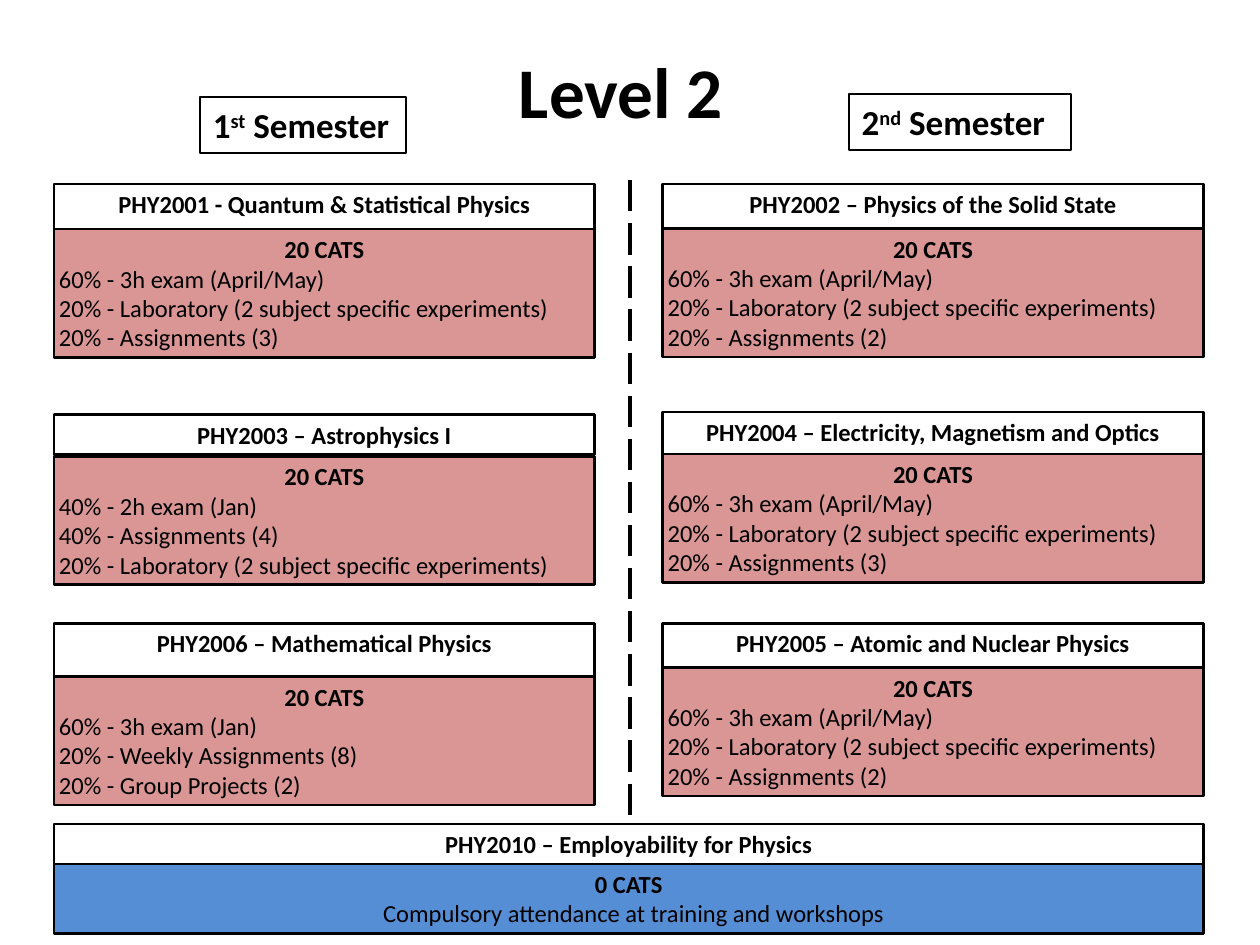
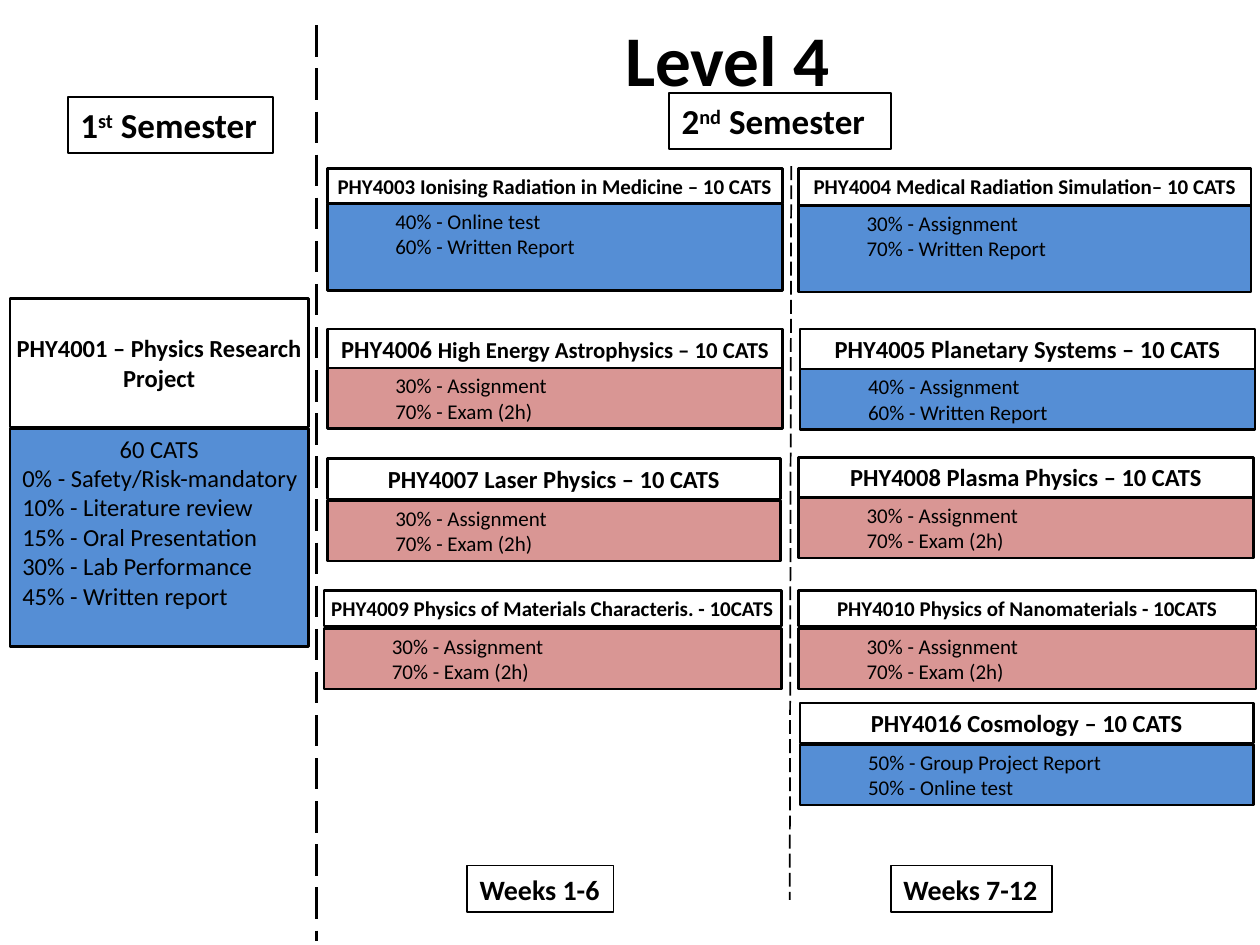
from dataclasses import dataclass

from lxml import etree
from pptx import Presentation
from pptx import util as u
from pptx.dml.color import RGBColor
from pptx.enum import dml, shapes, text
from pptx.oxml.ns import qn

FONT = "Calibri"
BLACK, WHITE, RED, BLUE = "000000", "FFFFFF", "D99694", "558ED5"
PAD = 0.1
LEFT, RIGHT, WIDE = 1.09, 13.36, 10.9
EARLY, LATE, SLIM = 6.6, 16.1, 9.17
SPRING = "60% - 3h exam (April/May)"
WINTER = "60% - 3h exam (Jan)"
LAB = "20% - Laboratory (2 subject specific experiments)"
TASK, TEST = "30% - Assignment", "70% - Exam (2h)"


@dataclass(frozen=True)
class Span:
    text: str
    size: float = 14
    sup: bool = False


@dataclass(frozen=True)
class Look:
    """Style of the work list in a card."""
    size: float = 14
    dent: float = 0
    bold: bool = True
    mid: bool = False


CORE, SHORT = Look(), Look(size=12, dent=1.27)
MAIN, WORK = Look(dent=0.15, bold=False), Look(dent=0.2, mid=True)


@dataclass(frozen=True)
class Card:
    """A module: drop is the step from head to body, cap the head's height."""
    x: float
    y: float
    w: float
    drop: float
    cap: float
    deep: float
    head: tuple[Span, ...]
    work: tuple[str, ...]
    fill: str = RED
    cats: str = ""
    look: Look = CORE
    anchor: text.MSO_ANCHOR = text.MSO_ANCHOR.TOP


@dataclass(frozen=True)
class Label:
    x: float
    y: float
    w: float
    h: float
    spans: tuple[Span, ...]


@dataclass(frozen=True)
class Rule:
    x: float
    top: float
    end: float
    low: float
    wide: float


def core(x: float, y: float, drop: float, name: str, *work: str,
         cap: float = 1.4) -> Card:
    return Card(x, y, WIDE, drop, cap, 2.59, (Span(name),), work,
                cats="20 CATS")


def short(x: float, y: float, drop: float, head: tuple[Span, ...],
          *work: str, w: float = SLIM, cap: float = 0.81,
          deep: float = 1.22, fill: str = RED) -> Card:
    return Card(x, y, w, drop, cap, deep, head, work, fill, look=SHORT)


def term(x: float, y: float, w: float, num: str, sup: str) -> Label:
    return Label(x, y, w, 1.12, (Span(num, 20), Span(sup, 20, True),
                                 Span(" Semester", 20)))


RULES2 = (Rule(12.7, 3.63, 12.7, 18.42, 2.25),)
LABELS2 = (term(4.04, 1.96, 4.14, "1", "st"),
           term(17.12, 1.9, 4.47, "2", "nd"))
CARDS2 = (
    core(LEFT, 3.71, 0.91, "PHY2001 - Quantum & Statistical Physics",
         SPRING, LAB, "20% - Assignments (3)"),
    core(LEFT, 8.36, 0.84, "PHY2003 – Astrophysics I",
         "40% - 2h exam (Jan)", "40% - Assignments (4)", LAB, cap=0.81),
    core(RIGHT, 3.71, 0.9, "PHY2002 – Physics of the Solid State",
         SPRING, LAB, "20% - Assignments (2)"),
    core(RIGHT, 8.31, 0.84, "PHY2004 – Electricity, Magnetism and Optics",
         SPRING, LAB, "20% - Assignments (3)"),
    core(RIGHT, 12.57, 0.89, "PHY2005 – Atomic and Nuclear Physics",
         SPRING, LAB, "20% - Assignments (2)"),
    core(LEFT, 12.57, 1.07, "PHY2006 – Mathematical Physics",
         WINTER, "20% - Weekly Assignments (8)", "20% - Group Projects (2)"),
    Card(LEFT, 16.61, 23.17, 0.81, 0.81, 1.4,
         (Span("PHY2010 – Employability for Physics"),),
         ("Compulsory attendance at training and workshops",),
         BLUE, "0 CATS", WORK),
)

RULES4 = (Rule(15.95, 3.35, 15.92, 18.14, 1), Rule(6.38, 0.51, 6.38, 18.97, 2.25))
LABELS4 = (
    term(1.37, 1.96, 4.14, "1", "st"), term(13.49, 1.88, 4.47, "2", "nd"),
    Label(9.42, 17.45, 2.95, 0.94, (Span("Weeks 1-6", 16),)),
    Label(17.96, 17.45, 3.25, 0.94, (Span("Weeks 7-12", 16),)),
)
CARDS4 = (
    Card(0.2, 6.02, 6.02, 2.62, 2.59, 4.39,
         (Span("PHY4001 – Physics Research Project"),),
         ("0% - Safety/Risk-mandatory", "10% - Literature review",
          "15% - Oral Presentation", "30% - Lab Performance",
          "45% - Written report"),
         BLUE, "60 CATS", MAIN, text.MSO_ANCHOR.MIDDLE),
    short(16.13, 6.63, 0.81, (Span("PHY4005 Planetary Systems – 10 CATS"),),
          "40% - Assignment", "60% - Written Report", fill=BLUE),
    short(EARLY, 6.63, 0.79,
          (Span("PHY4006 "), Span("High Energy Astrophysics – 10 CATS", 13)),
          TASK, TEST),
    short(LATE, 9.22, 0.81, (Span("PHY4008 Plasma Physics – 10 CATS"),),
          TASK, TEST),
    short(EARLY, 9.25, 0.84, (Span("PHY4007 Laser Physics – 10 CATS"),),
          TASK, TEST, w=9.14),
    short(6.53, 11.91, 0.76,
          (Span("PHY4009 Physics of Materials Characteris. - 10CATS", 12),),
          TASK, TEST, w=9.22, cap=0.71),
    short(16.13, 14.17, 0.84, (Span("PHY4016 Cosmology – 10 CATS"),),
          "50% - Group Project Report", "50% - Online test",
          w=9.14, fill=BLUE),
    short(EARLY, 3.4, 0.71,
          (Span("PHY4003 Ionising Radiation in Medicine – 10 CATS", 12),),
          "40% - Online test", "60% - Written Report",
          cap=0.71, deep=1.75, fill=BLUE),
    short(LATE, 3.4, 0.74,
          (Span("PHY4004 Medical Radiation Simulation– 10 CATS", 12),),
          TASK, "70% - Written Report",
          w=9.12, cap=0.91, deep=1.75, fill=BLUE),
    short(LATE, 11.91, 0.76,
          (Span("PHY4010 Physics of Nanomaterials - 10CATS", 12),),
          TASK, TEST, w=9.22, cap=0.71),
)


def tint(code: str) -> RGBColor:
    return RGBColor.from_string(code)


def style(run, size: float, bold: bool = True) -> None:
    font = run.font
    font.name, font.size, font.bold = FONT, u.Pt(size), bold
    font.color.rgb = tint(BLACK)


def write(par, spans: tuple[Span, ...]) -> None:
    for span in spans:
        run = par.add_run()
        run.text = span.text
        style(run, span.size)
        if span.sup:
            run.font._element.set("baseline", "30000")


def box(group, x: float, y: float, w: float, h: float, fill: str,
        wide: float, pads: tuple[float, float, float, float]):
    """Draw a framed rectangle; pads are left, top, right, bottom."""
    rect = group.add_shape(shapes.MSO_SHAPE.RECTANGLE,
                           u.Cm(x), u.Cm(y), u.Cm(w), u.Cm(h))
    rect.shadow.inherit = False
    rect.fill.solid()
    rect.fill.fore_color.rgb = tint(fill)
    rect.line.color.rgb = tint(BLACK)
    rect.line.width = u.Pt(wide)
    frame = rect.text_frame
    frame.word_wrap = True
    frame.vertical_anchor = text.MSO_ANCHOR.TOP
    (frame.margin_left, frame.margin_top,
     frame.margin_right, frame.margin_bottom) = map(u.Cm, pads)
    return frame


def draw_card(slide, card: Card) -> None:
    group = slide.shapes.add_group_shape().shapes
    head = box(group, card.x, card.y, card.w, card.cap, WHITE, 1.5,
               (0, PAD, 0, PAD))
    head.vertical_anchor = card.anchor
    head.paragraphs[0].alignment = text.PP_ALIGN.CENTER
    write(head.paragraphs[0], card.head)

    look = card.look
    body = box(group, card.x, card.y + card.drop, card.w, card.deep,
               card.fill, 1.5, (PAD,) * 4)
    top = (card.cats,) if card.cats else ()
    body.text = "\n".join(top + card.work)
    for i, par in enumerate(body.paragraphs):
        lead = i < len(top)
        par.alignment = (text.PP_ALIGN.CENTER if lead or look.mid
                         else text.PP_ALIGN.LEFT)
        if not lead:
            par._p.get_or_add_pPr().set("marL", str(int(u.Cm(look.dent))))
        style(par.runs[0], look.size, lead and look.bold)


def draw_label(slide, tag: Label) -> None:
    frame = box(slide.shapes, tag.x, tag.y, tag.w, tag.h, WHITE, 1,
                (0.25, 0.13, 0, 0.13))
    frame.paragraphs[0].alignment = text.PP_ALIGN.LEFT
    write(frame.paragraphs[0], tag.spans)


def draw_rule(slide, rule: Rule) -> None:
    line = slide.shapes.add_connector(
        shapes.MSO_CONNECTOR.STRAIGHT, u.Cm(rule.x), u.Cm(rule.top),
        u.Cm(rule.end), u.Cm(rule.low))
    line.line.color.rgb = tint(BLACK)
    line.line.width = u.Pt(rule.wide)
    line.line.dash_style = dml.MSO_LINE.LONG_DASH
    etree.SubElement(line._element.spPr, qn("a:effectLst"))


def draw_slide(deck, name: str, x: float, y: float, rules: tuple[Rule, ...],
               labels: tuple[Label, ...], cards: tuple[Card, ...]) -> None:
    slide = deck.slides.add_slide(deck.slide_layouts[5])
    title = slide.shapes.title
    title.left, title.top = u.Cm(x), u.Cm(y)
    title.width, title.height = u.Cm(22.86), u.Cm(1.73)
    frame = title.text_frame
    frame.text = name
    frame.auto_size = text.MSO_AUTO_SIZE.NONE
    frame.vertical_anchor = text.MSO_ANCHOR.MIDDLE
    frame.paragraphs[0].alignment = text.PP_ALIGN.CENTER
    style(frame.paragraphs[0].runs[0], 40.7)
    for rule in rules:
        draw_rule(slide, rule)
    for tag in labels:
        draw_label(slide, tag)
    for card in cards:
        draw_card(slide, card)


def main() -> None:
    deck = Presentation()
    deck.slide_width, deck.slide_height = u.Cm(25.4), u.Cm(19.05)
    draw_slide(deck, "Level 2", 1.09, 0.94, RULES2, LABELS2, CARDS2)
    draw_slide(deck, "Level 4", 3.23, 0.3, RULES4, LABELS4, CARDS4)
    deck.save("out.pptx")


if __name__ == "__main__":
    main()
